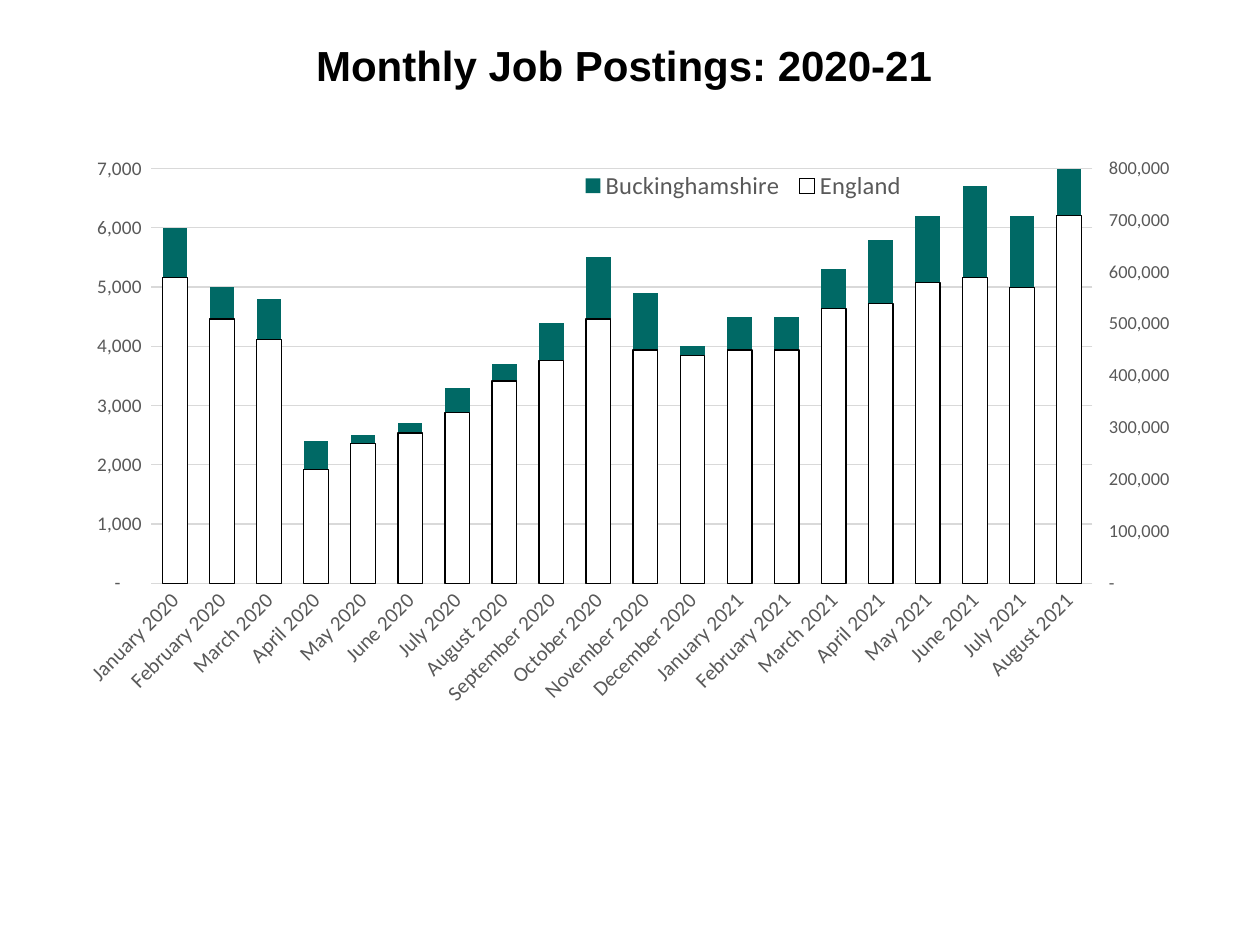
"""Build the monthly job postings slide with a two-axis column chart."""
from copy import deepcopy

from lxml import etree
from pptx import Presentation
from pptx import util as u
from pptx.chart.data import CategoryChartData
from pptx.dml.color import RGBColor
from pptx.enum import chart as ch, text
from pptx.oxml import ns

TEAL = RGBColor(0x00, 0x69, 0x65)
WHITE = RGBColor(0xFF, 0xFF, 0xFF)
BLACK = RGBColor(0x00, 0x00, 0x00)
GREY = RGBColor(0x59, 0x59, 0x59)
PALE = RGBColor(0xD9, 0xD9, 0xD9)

MONTHS = ["January", "February", "March", "April", "May", "June", "July",
          "August", "September", "October", "November", "December"]
BUCKS = [6000, 5000, 4800, 2400, 2500, 2700, 3300, 3700, 4400, 5500,
         4900, 4000, 4500, 4500, 5300, 5800, 6200, 6700, 6200, 7500]
ENGLAND_THOUSANDS = [590, 510, 470, 220, 270, 290, 330, 390, 430, 510,
                     450, 440, 450, 450, 530, 540, 580, 590, 570, 710]
NUMBER_FORMAT = '_-* #,##0_-;\\-* #,##0_-;_-* "-"??_-;_-@_'


def style_font(font, size, color=GREY, name="Calibri"):
    font.size, font.name = u.Pt(size), name
    font.color.rgb = color


def place(parent, x, y, w, h, inner=False):
    for old in parent.findall(ns.qn("c:layout")):
        parent.remove(old)
    layout = etree.Element(ns.qn("c:layout"))
    manual = etree.SubElement(layout, ns.qn("c:manualLayout"))
    parts = [("layoutTarget", "inner")] if inner else []
    parts += [("xMode", "edge"), ("yMode", "edge"), ("x", x), ("y", y), ("w", w), ("h", h)]
    for tag, val in parts:
        etree.SubElement(manual, ns.qn("c:" + tag)).set("val", str(val))
    return layout


prs = Presentation()
prs.slide_width, prs.slide_height = u.Inches(10), u.Inches(7.5)
W, H = prs.slide_width, prs.slide_height
s = prs.slides.add_slide(prs.slide_layouts[6])

sp = s.shapes.add_textbox(int(W * 0.05), u.Inches(-0.11), int(W * 0.9), u.Inches(1.25))
tf = sp.text_frame
tf.word_wrap = True
tf.vertical_anchor = text.MSO_ANCHOR.MIDDLE
tf.text = "Monthly Job Postings: 2020-21 "
p = tf.paragraphs[0]
p.alignment = text.PP_ALIGN.CENTER
r = p.runs[0]
style_font(r.font, 24, BLACK, "Arial")
r.font.bold = True

data = CategoryChartData()
data.categories = [f"{m} 2020" for m in MONTHS] + [f"{m} 2021" for m in MONTHS[:8]]
data.add_series("Buckinghamshire", BUCKS)
data.add_series("England", [v * 1000 for v in ENGLAND_THOUSANDS])
chart = s.shapes.add_chart(ch.XL_CHART_TYPE.COLUMN_CLUSTERED, int(W * 0.05), u.Inches(1.14),
                           int(W * 0.9), int(H * 0.66), data).chart
style_font(chart.font, 10, BLACK)
chart.has_title = False

plot = chart.plots[0]
plot.gap_width = 91
plot.vary_by_categories = False
for series, color in zip(plot.series, (TEAL, WHITE)):
    series.format.fill.solid()
    series.format.fill.fore_color.rgb = color
    series.invert_if_negative = False
line = plot.series[1].format.line
line.color.rgb, line.width = BLACK, u.Pt(0.75)

months, left = chart.category_axis, chart.value_axis
style_font(months.tick_labels.font, 12)
style_font(left.tick_labels.font, 11)
left.minimum_scale, left.maximum_scale, left.major_unit = 0, 7000, 1000
left.tick_labels.number_format = NUMBER_FORMAT
left.tick_labels.number_format_is_linked = False
left.format.line.fill.background()
for axis in (months, left):
    axis.major_tick_mark = axis.minor_tick_mark = ch.XL_TICK_MARK.NONE
for line in (months.format.line, left.major_gridlines.format.line):
    line.color.rgb, line.width = PALE, u.Pt(0.75)

chart.has_legend = True
legend = chart.legend
legend.position = ch.XL_LEGEND_POSITION.BOTTOM
legend.include_in_layout = False
style_font(legend.font, 14)

area = chart.element.find(".//" + ns.qn("c:plotArea"))
bars = area.find(ns.qn("c:barChart"))
cat_ax, val_ax = area.find(ns.qn("c:catAx")), area.find(ns.qn("c:valAx"))
cat_ax.find(ns.qn("c:txPr")).find(ns.qn("a:bodyPr")).set("rot", "-2700000")

right_bars, right_val, right_cat = deepcopy(bars), deepcopy(val_ax), deepcopy(cat_ax)
bars.remove(bars.findall(ns.qn("c:ser"))[1])
right_bars.remove(right_bars.find(ns.qn("c:ser")))
bars.addnext(right_bars)
val_ax.addnext(right_val)
right_val.addnext(right_cat)

for ref, number in zip(right_bars.findall(ns.qn("c:axId")), ("5001", "5002")):
    ref.set("val", number)
for axis, number, cross in ((right_cat, "5001", "5002"), (right_val, "5002", "5001")):
    axis.find(ns.qn("c:axId")).set("val", number)
    axis.find(ns.qn("c:crossAx")).set("val", cross)
right_cat.find(ns.qn("c:delete")).set("val", "1")
right_val.remove(right_val.find(ns.qn("c:majorGridlines")))
for tag, val in (("axPos", "r"), ("majorTickMark", "out"), ("crosses", "max"),
                 ("majorUnit", "100000"), ("scaling/c:max", "800000")):
    steps = [ns.qn(step if ":" in step else "c:" + step) for step in tag.split("/")]
    right_val.find("/".join(steps)).set("val", val)
for props in right_val.iter(ns.qn("a:defRPr")):
    props.set("sz", "1050")

area.insert(0, place(area, 0.078, 0.04, 0.83, 0.665, inner=True))
box = chart.element.find(".//" + ns.qn("c:legend"))
box.find(ns.qn("c:legendPos")).addnext(place(box, 0.45, 0.035, 0.3, 0.065))

prs.save("out.pptx")
